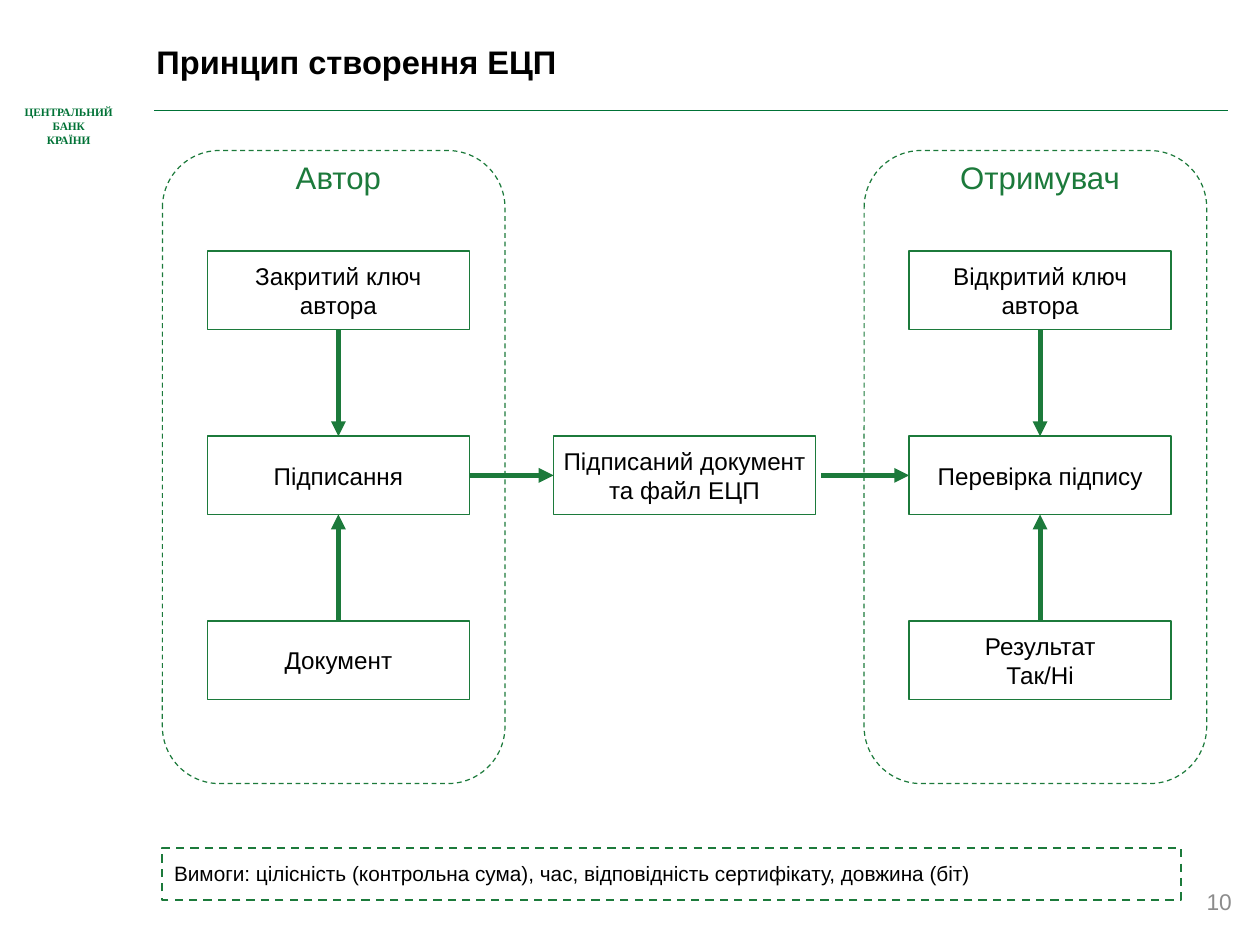
"""Build the slide that shows how a digital signature is created and checked."""
import pptx
import pptx.chart
import pptx.dml.color
import pptx.enum.dml
import pptx.enum.shapes
import pptx.enum.text
import pptx.oxml
import pptx.oxml.ns
import pptx.util
from lxml import etree

Pt = pptx.util.Pt
SHAPES = pptx.enum.shapes.MSO_SHAPE
ALIGN = pptx.enum.text.PP_ALIGN
ANCHOR = pptx.enum.text.MSO_ANCHOR

COLORS = {"green": "1C7A3B", "bank": "007236", "text": "000000", "number": "8C8C8C"}
BANK = ["ЦЕНТРАЛЬНИЙ", "БАНК", "КРАЇНИ"]
TITLE = "Принцип створення ЕЦП"
NUMBER = "10"
REQUIREMENTS = "Вимоги: цілісність (контрольна сума), час, відповідність сертифікату, довжина (біт)"
PANELS = [
    ("Автор", 98.64, [["Закритий ключ", "автора"], ["Підписання"], ["Документ"]]),
    ("Отримувач", 524.88, [["Відкритий ключ автора"], ["Перевірка підпису"], ["Результат", "Так/Ні"]]),
]
SIGNED = ["Підписаний документ та файл ЕЦП"]

PANEL_TOP, PANEL_WIDTH, PANEL_HEIGHT = 91.44, 208.08, 384.48
BOX_WIDTH, BOX_HEIGHT, BOX_INDENT = 159.12, 47.52, 27.36
FIRST_ROW, ROW_STEP = 152.64, 112.32
SIGNED_LEFT = 336.24
ARROW_GAP = 3.6


def color(name):
    return pptx.dml.color.RGBColor.from_string(COLORS[name])


def write(shape, lines, size, ink="text", align=ALIGN.CENTER, anchor=ANCHOR.MIDDLE,
          insets=(7.2, 3.6), font="Arial", bold=False):
    frame = shape.text_frame
    frame.word_wrap = True
    frame.vertical_anchor = anchor
    frame.margin_left = frame.margin_right = Pt(insets[0])
    frame.margin_top = frame.margin_bottom = Pt(insets[1])
    for index, line in enumerate(lines):
        paragraph = frame.add_paragraph() if index else frame.paragraphs[0]
        paragraph.alignment = align
        run = paragraph.add_run()
        run.text = line
        run.font.name = font
        run.font.size = Pt(size)
        run.font.bold = bold
        run.font.color.rgb = color(ink)


def add_text(slide, place, lines, size, **style):
    write(slide.shapes.add_textbox(*map(Pt, place)), lines, size, **style)


def add_outline(slide, kind, place, width, dashed=False):
    shape = slide.shapes.add_shape(kind, *map(Pt, place))
    shape.shadow.inherit = False
    shape.fill.background()
    shape.line.color.rgb = color("green")
    shape.line.width = Pt(width)
    if dashed:
        shape.line.dash_style = pptx.enum.dml.MSO_LINE.DASH
    return shape


def add_box(slide, left, row, lines):
    place = (left, FIRST_ROW + row * ROW_STEP, BOX_WIDTH, BOX_HEIGHT)
    box = add_outline(slide, SHAPES.RECTANGLE, place, 1)
    write(box, lines, 14.7, insets=(2.88, 3.6))
    return box


def add_line(slide, start, end, ink, width):
    line = slide.shapes.add_connector(
        pptx.enum.shapes.MSO_CONNECTOR.STRAIGHT, *map(Pt, start + end))
    line.line.color.rgb = color(ink)
    line.line.width = Pt(width)
    etree.SubElement(line._element.spPr, pptx.oxml.ns.qn("a:effectLst"))
    return line


def add_arrow(slide, target, target_side, source=None, source_side=None, start=(0, 0)):
    arrow = add_line(slide, start, start, "green", 3)
    if source is not None:
        arrow.begin_connect(source, source_side)
    arrow.end_connect(target, target_side)
    etree.SubElement(arrow.line._get_or_add_ln(), pptx.oxml.ns.qn("a:tailEnd"), type="triangle")


def add_panel(slide, heading, left, steps):
    place = (left, PANEL_TOP, PANEL_WIDTH, PANEL_HEIGHT)
    add_outline(slide, SHAPES.ROUNDED_RECTANGLE, place, 0.75, dashed=True)
    box_left = left + BOX_INDENT
    add_text(slide, (box_left, 97.92, BOX_WIDTH, 18.72), [heading], 18.9, ink="green")
    key, action, document = [add_box(slide, box_left, row, lines) for row, lines in enumerate(steps)]
    add_arrow(slide, action, 0, key, 2)
    add_arrow(slide, action, 2, document, 0)
    return action


def main():
    presentation = pptx.Presentation()
    presentation.slide_width = Pt(765.36)
    presentation.slide_height = Pt(566.64)
    slide = presentation.slides.add_slide(presentation.slide_layouts[6])

    add_text(slide, (2.16, 60.48, 79.2, 32.4), BANK, 6.9, ink="bank",
             anchor=ANCHOR.TOP, font="Times New Roman", bold=True)
    add_line(slide, (93.6, 66.96), (745.92, 66.96), "bank", 0.75)
    add_text(slide, (95.04, 0, 642.24, 74.88), [TITLE], 19.8,
             align=ALIGN.LEFT, insets=(0, 0), bold=True)
    add_text(slide, (689.04, 522, 66.24, 37.44), [NUMBER], 13.8, ink="number",
             align=ALIGN.RIGHT, anchor=ANCHOR.BOTTOM)
    requirements = add_outline(slide, SHAPES.RECTANGLE, (98.64, 514.8, 618.48, 31.68), 1.25, dashed=True)
    write(requirements, [REQUIREMENTS], 12.6, align=ALIGN.LEFT)

    signing, checking = [add_panel(slide, *panel) for panel in PANELS]
    signed = add_box(slide, SIGNED_LEFT, 1, SIGNED)
    add_arrow(slide, signed, 1, signing, 3)
    middle = FIRST_ROW + ROW_STEP + BOX_HEIGHT / 2
    add_arrow(slide, checking, 1, start=(SIGNED_LEFT + BOX_WIDTH + ARROW_GAP, middle))

    presentation.save("out.pptx")


if __name__ == "__main__":
    main()
